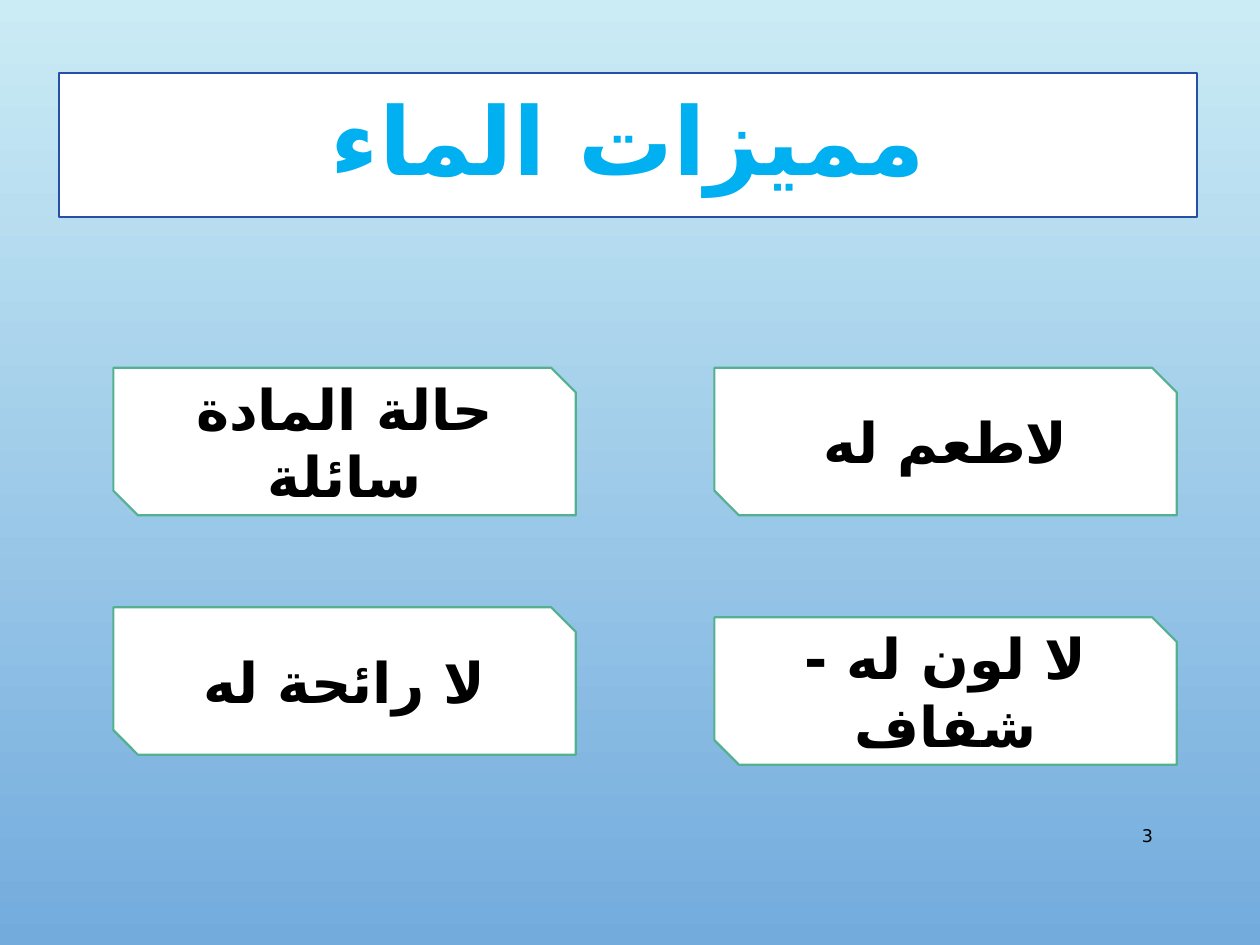
from pptx import Presentation, util as u
from pptx.dml.color import RGBColor
from pptx.enum import shapes, text
from pptx.oxml.ns import qn
from lxml import etree

# Content
TITLE = "مميزات الماء"
PAGE = "3"
# text, column, top as a share of the slide height
CARDS = [
    ("لا رائحة له", 0, 0.6427),
    ("لاطعم له", 1, 0.3893),
    ("لا لون له - شفاف", 1, 0.6533),
    ("حالة المادة سائلة", 0, 0.3893),
]

# Theme: type is (font, size, colour, bold)
THEME = {
    "sky": ("CBECF5", "73ABDD"),
    "fill": "FFFFFF",
    "frame": "274FA4",
    "edge": "53B18F",
    "line": 1.25,
    "arabic": "DejaVu Sans",
    "title": ("Calibri", 54, "00B0F0", True),
    "card": ("Roboto", 32, "000000", True),
    "page": ("Cabin", 10, "000000", False),
}

# Grid, in shares of the slide
WIDE, HIGH = u.Inches(10), u.Inches(7.5)
LEFT, STEP = 0.09, 0.477
CARD = (0.367, 0.156)


def rgb(code):
    return RGBColor.from_string(code)


def area(x, y, w, h):
    return [int(v) for v in (x * WIDE, y * HIGH, w * WIDE, h * HIGH)]


def paint(shape, edge):
    shape.fill.solid()
    shape.fill.fore_color.rgb = rgb(THEME["fill"])
    shape.line.color.rgb = rgb(edge)
    shape.line.width = u.Pt(THEME["line"])


def write(shape, words, style, align, rtl=False):
    name, size, color, bold = THEME[style]
    frame = shape.text_frame
    frame.word_wrap = True
    frame.auto_size = text.MSO_AUTO_SIZE.NONE
    frame.vertical_anchor = text.MSO_ANCHOR.MIDDLE
    para = frame.paragraphs[0]
    para.alignment = align
    if rtl:
        para._p.get_or_add_pPr().set("rtl", "1")
    run = para.add_run()
    run.text = words
    font = run.font
    font.name, font.size, font.bold = name, u.Pt(size), bold
    font.color.rgb = rgb(color)
    # Arabic letters take the complex-script font
    etree.SubElement(run._r.rPr, qn("a:cs")).set("typeface", THEME["arabic"])
    return para


def main():
    deck = Presentation()
    deck.slide_width, deck.slide_height = WIDE, HIGH
    slide = deck.slides.add_slide(deck.slide_layouts[5])
    mid = text.PP_ALIGN.CENTER

    # Background
    back = slide.background.fill
    back.gradient()
    back.gradient_angle = 270
    for stop, code, pos in zip(back.gradient_stops, THEME["sky"], (0, 1)):
        stop.color.rgb = rgb(code)
        stop.position = pos

    # Title
    head = slide.shapes.title
    head.left, head.top, head.width, head.height = area(0.047, 0.0773, 0.903, 0.152)
    paint(head, THEME["frame"])
    write(head, TITLE, "title", mid, rtl=True).line_spacing = 0.9

    # Page number
    box = slide.shapes.add_textbox(*area(0.862, 0.8573, 0.063, 0.0533))
    write(box, PAGE, "page", text.PP_ALIGN.RIGHT, rtl=True)

    # Cards
    for words, col, top in CARDS:
        card = slide.shapes.add_shape(
            shapes.MSO_SHAPE.SNIP_2_DIAG_RECTANGLE,
            *area(LEFT + col * STEP, top, *CARD))
        card.shadow.inherit = False
        paint(card, THEME["edge"])
        write(card, words, "card", mid)

    deck.save("out.pptx")


if __name__ == "__main__":
    main()
